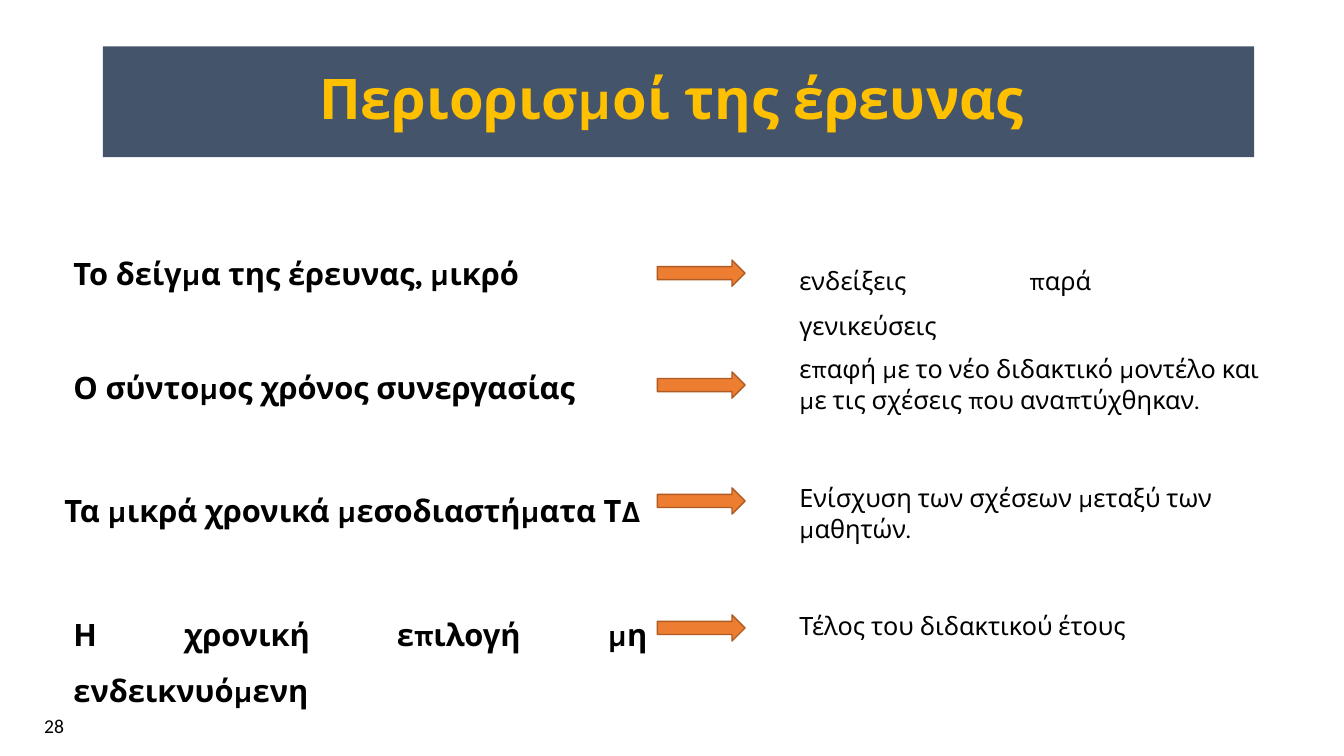
from pptx import Presentation
from pptx.dml.color import RGBColor
from pptx.enum.shapes import MSO_SHAPE
from pptx.enum.text import MSO_ANCHOR, PP_ALIGN
from pptx.util import Emu, Pt

EMU_PER_PX = 9144
COLORS = {
    "banner": "44546A",
    "heading": "FFC000",
    "text": "000000",
    "arrow": "ED7D31",
    "arrow_edge": "AF5C24",
}


def px(*lengths):
    return [Emu(length * EMU_PER_PX) for length in lengths]


def color(name):
    return RGBColor.from_string(COLORS[name])


class SlideBuilder:
    font = "Karla"

    def __init__(self, deck):
        self.slide = deck.slides.add_slide(deck.slide_layouts[5])

    def fill_text(self, frame, text, size, ink="text", bold=False,
                  align=PP_ALIGN.LEFT, spacing=1.0, font=None):
        frame.word_wrap = True
        paragraph = frame.paragraphs[0]
        paragraph.text = text
        paragraph.alignment = align
        paragraph.line_spacing = spacing
        paragraph.font.name = font or self.font
        paragraph.font.size = Pt(size)
        paragraph.font.bold = bold
        paragraph.font.color.rgb = color(ink)

    def title(self, text, left, top, width, height):
        banner = self.slide.shapes.title
        banner.left, banner.top, banner.width, banner.height = px(left, top, width, height)
        banner.fill.solid()
        banner.fill.fore_color.rgb = color("banner")
        banner.text_frame.vertical_anchor = MSO_ANCHOR.MIDDLE
        self.fill_text(banner.text_frame, text, 40, "heading", True, PP_ALIGN.CENTER, 0.9)

    def text(self, text, left, top, width, height, size, **style):
        box = self.slide.shapes.add_textbox(*px(left, top, width, height))
        self.fill_text(box.text_frame, text, size, **style)

    def arrow(self, left, top, width, height):
        arrow = self.slide.shapes.add_shape(
            MSO_SHAPE.RIGHT_ARROW, *px(left, top, width, height))
        arrow.shadow.inherit = False
        arrow.fill.solid()
        arrow.fill.fore_color.rgb = color("arrow")
        arrow.line.color.rgb = color("arrow_edge")
        arrow.line.width = Pt(1)


def main():
    deck = Presentation()
    deck.slide_width, deck.slide_height = px(1333, 750)
    builder = SlideBuilder(deck)
    builder.title("Περιορισμοί της έρευνας ", 102, 46, 1142, 110)
    builder.text("28", 34, 703, 40, 34, 14, font="Calibri")

    spaced = {"align": PP_ALIGN.JUSTIFY, "spacing": 1.5}
    limitations = [
        ("Το δείγμα της έρευνας, µικρό", (63, 229, 568, 58), 258,
         "ενδείξεις παρά γενικεύσεις", (783, 243, 309, 49), spaced),
        ("Ο σύντομος χρόνος συνεργασίας", (63, 343, 523, 58), 369,
         "επαφή με το νέο διδακτικό μοντέλο και με τις σχέσεις που αναπτύχθηκαν.",
         (783, 346, 508, 71), {}),
        ("Τα μικρά χρονικά μεσοδιαστήματα ΤΔ", (54, 465, 608, 58), 484,
         "Ενίσχυση των σχέσεων μεταξύ των μαθητών.", (783, 474, 536, 40), {}),
        ("Η χρονική επιλογή μη ενδεικνυόμενη", (63, 588, 589, 58), 610,
         "Τέλος του διδακτικού έτους", (783, 586, 412, 101), spaced),
    ]
    for limitation, limitation_area, arrow_top, effect, effect_area, effect_style in limitations:
        builder.text(limitation, *limitation_area, 22, bold=True, **spaced)
        builder.arrow(652, arrow_top, 87, 26)
        builder.text(effect, *effect_area, 18, **effect_style)

    deck.save("out.pptx")


if __name__ == "__main__":
    main()
